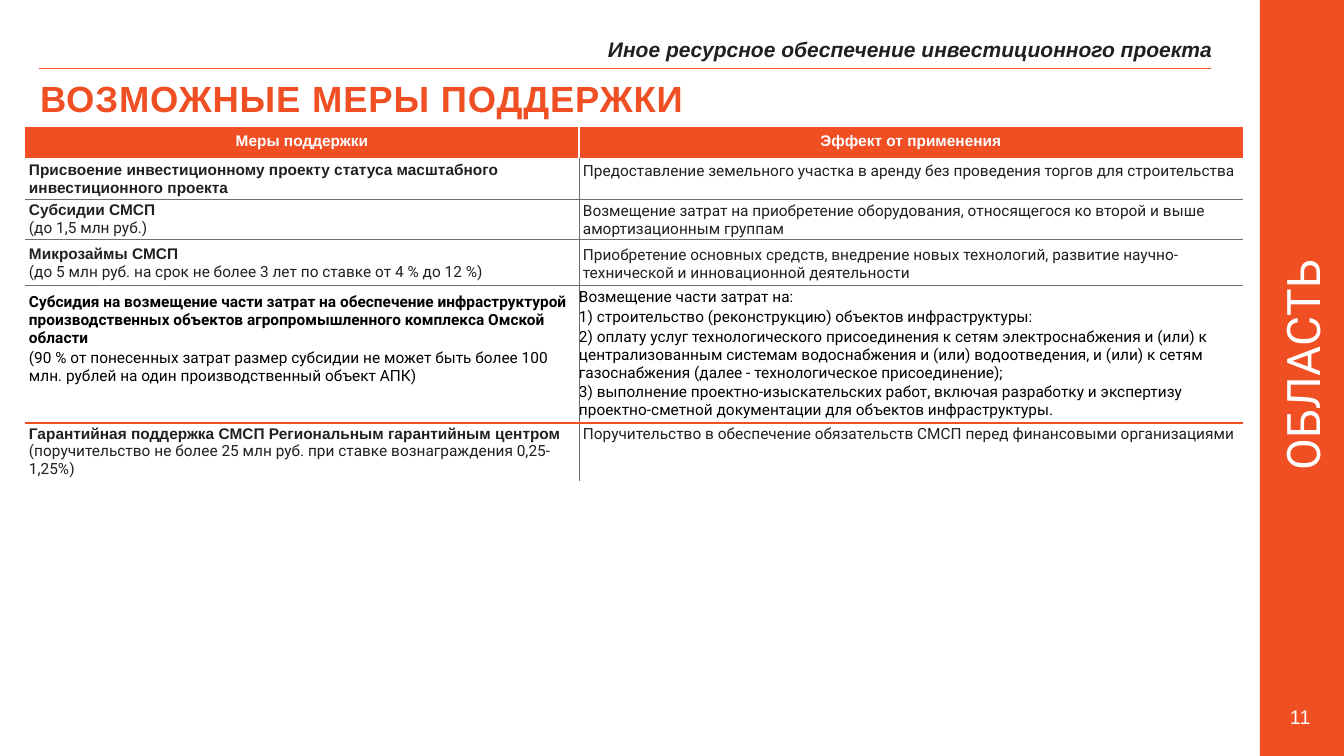
from lxml import etree
from pptx import Presentation
from pptx.dml.color import RGBColor
from pptx.enum.shapes import MSO_CONNECTOR, MSO_SHAPE
from pptx.enum.text import MSO_ANCHOR, PP_ALIGN
from pptx.oxml.ns import qn
from pptx.util import Emu, Pt

PX = 9525 * 96 / 100.8
ORANGE, WHITE, INK, BLACK, GREY = "F04E23", "FFFFFF", "231F20", "000000", "6D6E71"

COLUMNS = [554, 664]
HEADERS = ["Меры поддержки", "Эффект от применения"]
HEADER_HEIGHT = 31

# Each row: height, ink, then for both cells (left, top, right) insets and (text, font, bold) paragraphs
ROWS = [
    (41, INK,
     (4, 4, 130), [("Присвоение инвестиционному проекту статуса масштабного "
                    "инвестиционного проекта", "Arial", True)],
     (4, 4, 30), [("Предоставление земельного участка в аренду без проведения торгов "
                   "для строительства", "Roboto", False)]),
    (40, INK,
     (4, 3, 0), [("Субсидии СМСП", "Arial", True),
                 ("(до 1,5 млн руб.)", "Roboto", False)],
     (4, 3, 0), [("Возмещение затрат на приобретение оборудования, относящегося ко "
                  "второй и выше амортизационным группам", "Roboto", False)]),
    (46, INK,
     (4, 7, 0), [("Микрозаймы СМСП", "Arial", True),
                 ("(до 5 млн руб. на срок не более 3 лет по ставке от 4 % до 12 %)",
                  "Roboto", False)],
     (4, 7, 0), [("Приобретение основных средств, внедрение новых технологий, развитие "
                  "научно-технической и инновационной деятельности", "Roboto", False)]),
    (138, BLACK,
     (4, 8, 0), [("Субсидия на возмещение части затрат на обеспечение инфраструктурой "
                  "производственных объектов агропромышленного комплекса Омской области",
                  "Roboto", True),
                 ("(90 % от понесенных затрат размер субсидии не может быть более 100 млн. "
                  "рублей на один производственный объект АПК)", "Roboto", False)],
     (0, 3, 0), [("Возмещение части затрат на:", "Roboto", False),
                 ("1) строительство (реконструкцию) объектов инфраструктуры:",
                  "Roboto", False),
                 ("2) оплату услуг технологического присоединения к сетям "
                  "электроснабжения и (или) к централизованным системам водоснабжения "
                  "и (или) водоотведения, и (или) к сетям газоснабжения (далее - "
                  "технологическое присоединение);", "Roboto", False),
                 ("3) выполнение проектно-изыскательских работ, включая разработку и "
                  "экспертизу проектно-сметной документации для объектов инфраструктуры.",
                  "Roboto", False)]),
    (58, INK,
     (4, 2, 0), [("Гарантийная поддержка СМСП Региональным гарантийным центром",
                  "Arial", True),
                 ("(поручительство не более 25 млн руб. при ставке вознаграждения "
                  "0,25-1,25%)", "Roboto", False)],
     (4, 2, 30), [("Поручительство в обеспечение обязательств СМСП перед финансовыми "
                   "организациями", "Roboto", False)]),
]


def px(length):
    return Emu(round(length * PX))


def rgb(color):
    return RGBColor.from_string(color)


def style(para, size, color, font="Arial", bold=False, italic=False, spacing=0):
    for span in para.runs:
        span.font.size, span.font.name = Pt(size), font
        span.font.bold, span.font.italic = bold, italic
        span.font.color.rgb = rgb(color)
        if spacing:
            span.font._element.set("spc", str(spacing))


def set_insets(target, left, top, right):
    target.margin_left, target.margin_top = px(left), px(top)
    target.margin_right = target.margin_bottom = 0


def add_label(page, box, text, size, color, inset=1, align=PP_ALIGN.LEFT, **look):
    label = page.shapes.add_textbox(*map(px, box))
    frame = label.text_frame
    frame.word_wrap = True
    set_insets(frame, inset, inset, 0)
    frame.text = text
    frame.paragraphs[0].alignment = align
    style(frame.paragraphs[0], size, color, **look)
    return label


def set_borders(cell, **lines):
    """Sides are L, R, T and B; each line is (color, points), a missing side is bare."""
    properties = cell._tc.get_or_add_tcPr()
    for side in "LRTB":
        color, width = lines.get(side) or (None, 0)
        line = etree.SubElement(properties, qn("a:ln" + side), w=str(Pt(width)))
        if color:
            fill = etree.SubElement(line, qn("a:solidFill"))
            etree.SubElement(fill, qn("a:srgbClr"), val=color)
        else:
            etree.SubElement(line, qn("a:noFill"))


def fill_cell(cell, insets, paragraphs, color, align=PP_ALIGN.LEFT):
    set_insets(cell, *insets)
    cell.vertical_anchor = MSO_ANCHOR.TOP
    cell.text_frame.text = "\n".join(text for text, font, bold in paragraphs)
    for index, para in enumerate(cell.text_frame.paragraphs):
        text, font, bold = paragraphs[index]
        para.alignment = align
        if index and font == "Roboto" and color == BLACK:
            para.space_before = Pt(1.4)
        style(para, 11, color, font, bold)


def draw_heading(page, box):
    left, top, width, height = box
    add_label(page, (left + 568, top, 612, 28),
              "Иное ресурсное обеспечение инвестиционного проекта",
              15, INK, bold=True, italic=True)
    # Rule under the section name
    rule = page.shapes.add_connector(MSO_CONNECTOR.STRAIGHT, px(left), px(top + 32),
                                     px(left + width), px(top + 32))
    rule.line.color.rgb, rule.line.width = rgb(ORANGE), Pt(0.5)
    etree.SubElement(rule._element.spPr, qn("a:effectLst"))
    add_label(page, (left, top + height - 46, 670, 46), "ВОЗМОЖНЫЕ МЕРЫ ПОДДЕРЖКИ",
              26, ORANGE, bold=True, spacing=60)


def draw_measures(page, box):
    table = page.shapes.add_table(len(ROWS) + 1, len(COLUMNS), *map(px, box)).table
    table.first_row = table.horz_banding = False
    for column, width in zip(table.columns, COLUMNS):
        column.width = px(width)
    heights = [HEADER_HEIGHT] + [row[0] for row in ROWS]
    for row, height in zip(table.rows, heights):
        row.height = px(height)

    # Header
    for index, header in enumerate(HEADERS):
        cell = table.cell(0, index)
        set_borders(cell, **{"LR"[1 - index]: None, "RL"[index]: (WHITE, 1)})
        cell.fill.solid()
        cell.fill.fore_color.rgb = rgb(ORANGE)
        fill_cell(cell, (0, 6, 0), [(header, "Arial", True)], WHITE, PP_ALIGN.CENTER)

    # Measures and their effects, with an orange line above the last row
    thin = (GREY, 0.75)
    below = [thin] * (len(ROWS) - 2) + [(ORANGE, 1.5), None]
    above = [None] + below[:-1]
    for number, (height, color, *cells) in enumerate(ROWS):
        for index in range(len(COLUMNS)):
            cell = table.cell(number + 1, index)
            set_borders(cell, T=above[number], B=below[number], **{"RL"[index]: thin})
            cell.fill.background()
            fill_cell(cell, cells[2 * index], cells[2 * index + 1], color)


def draw_sidebar(page, box):
    left, top, width, height = box
    band = page.shapes.add_shape(MSO_SHAPE.RECTANGLE, *map(px, box))
    band.shadow.inherit = False
    band.fill.solid()
    band.fill.fore_color.rgb = rgb(ORANGE)
    band.line.fill.background()
    # Region name reading upwards, then the page number
    name_width, name_height = 260, 56
    name = add_label(page, (left + (width - name_width) // 2, top + 337,
                            name_width, name_height),
                     "ОБЛАСТЬ", 33, WHITE, inset=0, align=PP_ALIGN.CENTER, font="Roboto")
    name.rotation = 270
    add_label(page, (left + 28, top + height - 53, 30, 30), "11", 14, WHITE,
              inset=2, spacing=20)


def main():
    deck = Presentation()
    deck.slide_width, deck.slide_height = px(1344), px(756)
    page = deck.slides.add_slide(deck.slide_layouts[6])
    draw_sidebar(page, (1260, 0, 84, 756))
    draw_heading(page, (39, 36, 1172, 85))
    draw_measures(page, (25, 127, sum(COLUMNS), 354))
    deck.save("out.pptx")


if __name__ == "__main__":
    main()
